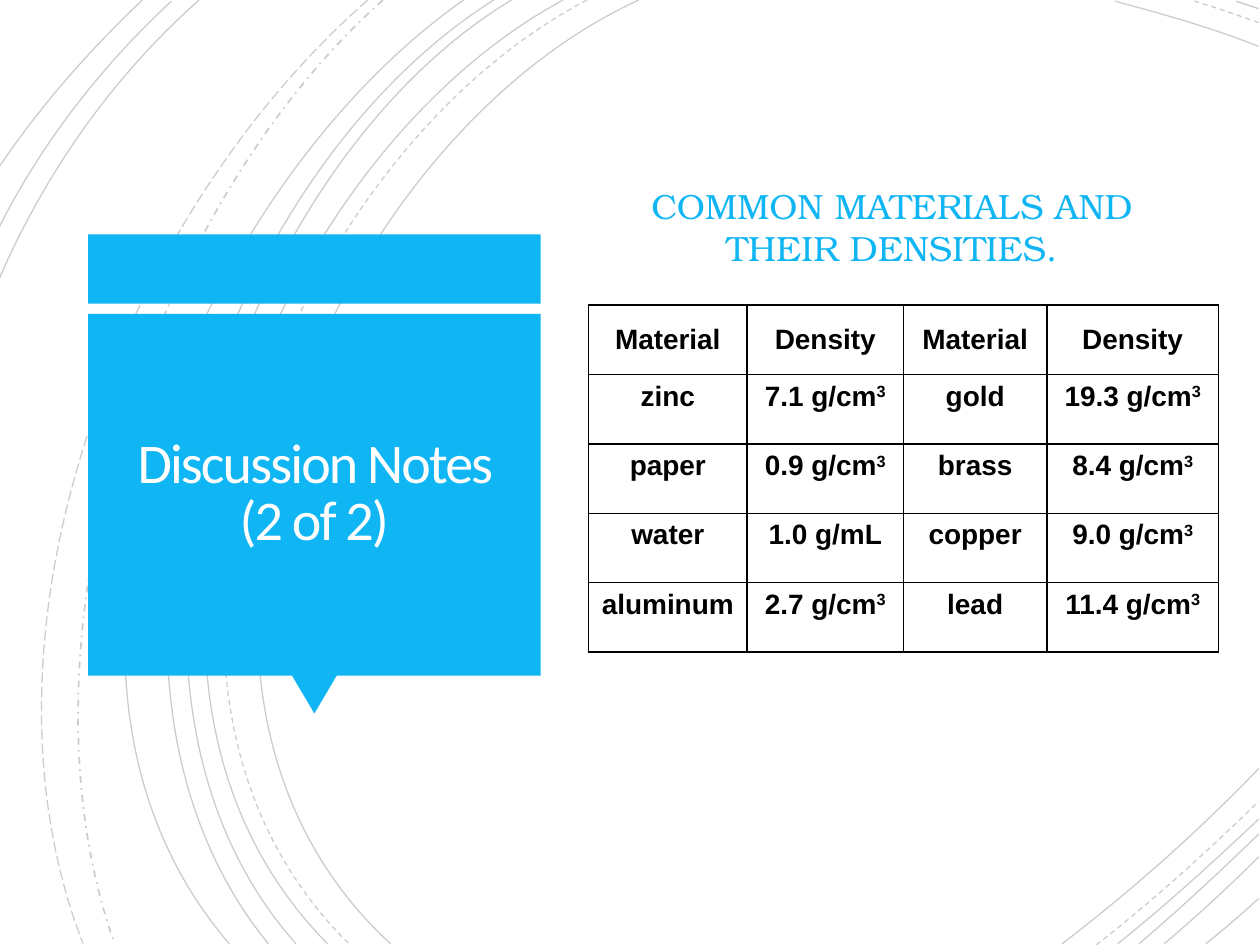
from dataclasses import dataclass

from lxml.etree import SubElement
from pptx import Presentation
from pptx.dml.color import RGBColor
from pptx.enum.dml import MSO_LINE
from pptx.enum.shapes import MSO_SHAPE
from pptx.enum.text import MSO_ANCHOR, MSO_AUTO_SIZE, PP_ALIGN
from pptx.oxml.ns import qn
from pptx.util import Inches, Pt


@dataclass(frozen=True)
class Theme:
    accent: RGBColor = RGBColor(0x10, 0xB6, 0xF4)
    ink: RGBColor = RGBColor(0, 0, 0)
    light: RGBColor = RGBColor(0xFF, 0xFE, 0xFF)
    title_font: str = "Calibri"
    heading_font: str = "TeX Gyre Bonum"
    table_font: str = "Arial"
    title_size: float = 32
    heading_size: float = 20
    table_size: float = 16
    arc_alpha: str = "20000"


THEME = Theme()
WIDTH, HEIGHT = 10, 7.5
GRID_COLUMNS = 10  # square grid, so the slide has 7.5 rows

SOLID, DASH = MSO_LINE.SOLID, MSO_LINE.DASH
DASH_DOT, LONG_DASH = MSO_LINE.DASH_DOT, MSO_LINE.LONG_DASH

# Long arcs run from the top edge to the bottom edge:
# start x, first control, second control, end x, dash, line width
LONG_ARCS = [
    (5.07, (2.56, 1.15), (0.83, 5.4), 3.1, SOLID, 0.75),
    (4.66, (2.26, 1.25), (0.63, 5.38), 2.77, DASH, 0.75),
    (4.47, (2.11, 1.27), (0.5, 5.37), 2.6, SOLID, 0.75),
    (4.06, (1.85, 1.33), (0.5, 5.41), 2.35, SOLID, 0.75),
    (3.92, (1.72, 1.38), (0.38, 5.34), 2.13, SOLID, 0.75),
    (3.68, (1.58, 1.47), (-0.07, 5.29), 1.82, SOLID, 0.75),
    (3.04, (1.17, 1.66), (0.06, 5.09), 0.91, DASH_DOT, 1),
    (2.92, (0.98, 1.69), (-0.31, 4.99), 0.66, LONG_DASH, 0.75),
]
# Corner arcs: start, first control, second control, end, dash
CORNER_ARCS = [
    ((9.99, 0.37), (9.62, 0.22), (9.22, 0.11), (8.85, 0.01), SOLID),
    ((9.99, 0.18), (9.82, 0.12), (9.65, 0.06), (9.48, 0.01), DASH),
    ((9.99, 0.07), (9.93, 0.05), (9.87, 0.03), (9.81, 0.01), SOLID),
    ((8.43, 7.49), (8.98, 7.07), (9.51, 6.6), (9.99, 6.1), SOLID),
    ((8.7, 7.5), (9.15, 7.15), (9.58, 6.76), (9.99, 6.36), DASH),
    ((8.87, 7.49), (9.26, 7.18), (9.63, 6.84), (9.99, 6.5), SOLID),
    ((9.04, 7.49), (9.37, 7.21), (9.68, 6.92), (9.99, 6.62), SOLID),
    ((9.24, 7.49), (9.5, 7.27), (9.75, 7.04), (9.99, 6.8), SOLID),
    ((9.57, 7.49), (9.71, 7.38), (9.85, 7.26), (9.99, 7.13), SOLID),
    ((1.58, 0), (0.88, 0.62), (0.35, 1.39), (-0.01, 2.22), SOLID),
    ((1.36, 0.01), (0.79, 0.54), (0.33, 1.14), (-0.01, 1.81), SOLID),
    ((1.13, 0), (0.71, 0.4), (0.32, 0.84), (-0.01, 1.33), SOLID),
]

# A caret marks the superscript that follows it
DENSITIES = [
    ("Material", "Density", "Material", "Density"),
    ("zinc", "7.1 g/cm^3", "gold", "19.3 g/cm^3"),
    ("paper", "0.9 g/cm^3", "brass", "8.4 g/cm^3"),
    ("water", "1.0 g/mL", "copper", "9.0 g/cm^3"),
    ("aluminum", "2.7 g/cm^3", "lead", "11.4 g/cm^3"),
]
COLUMN_SHARES = (0.252, 0.248, 0.228, 0.272)


def inches(*values):
    return [Inches(v) for v in values]


def share(box, x, y, w, h):
    """Part of a box, given as shares of its width and height."""
    left, top, width, height = box
    return left + x * width, top + y * height, w * width, h * height


def style(p, font, size, color, bold=False):
    p.alignment = PP_ALIGN.CENTER
    p.font.name, p.font.size, p.font.bold = font, Pt(size), bold
    p.font.color.rgb = color


def add_arc(s, points, dash, width):
    """Cubic curve through a start, two controls and an end."""
    start, *rest = [inches(*point) for point in points]
    builder = s.shapes.build_freeform(*start)
    builder.add_line_segments(rest, close=False)
    sp = builder.convert_to_shape()
    sp.shadow.inherit = False
    sp.fill.background()
    sp.line.color.rgb = THEME.ink
    sp.line.width, sp.line.dash_style = Pt(width), dash
    color = sp.line._ln.find(".//" + qn("a:srgbClr"))
    SubElement(color, qn("a:alpha"), val=THEME.arc_alpha)
    outline = sp._element.find(".//" + qn("a:path"))
    curve = SubElement(outline, qn("a:cubicBezTo"))
    for segment in outline.findall(qn("a:lnTo")):
        curve.append(segment[0])
        outline.remove(segment)


def add_backdrop(s, box):
    left, top, width, height = box
    unit = width / GRID_COLUMNS
    bottom = height / unit - 0.01
    arcs = [(((x0, 0), c1, c2, (x1, bottom)), dash, weight)
            for x0, c1, c2, x1, dash, weight in LONG_ARCS]
    arcs += [(points, dash, 0.75) for *points, dash in CORNER_ARCS]
    for points, dash, weight in arcs:
        placed = [(left + x * unit, top + y * unit) for x, y in points]
        add_arc(s, placed, dash, weight)


def add_title_callout(s, box, text):
    parts = [
        (MSO_SHAPE.RECTANGLE, (0, 0, 1, 0.145), 0),
        (MSO_SHAPE.ISOSCELES_TRIANGLE, (0.45, 0.92, 0.1, 0.08), 180),
        (MSO_SHAPE.RECTANGLE, (0, 0.166, 1, 0.755), 0),
    ]
    for kind, part, rotation in parts:
        sp = s.shapes.add_shape(kind, *inches(*share(box, *part)))
        sp.shadow.inherit = False
        sp.rotation = rotation
        sp.fill.solid()
        sp.fill.fore_color.rgb = THEME.accent
        sp.line.fill.background()

    title = s.shapes.title
    s.shapes._spTree.append(title._element)  # in front of the panel
    title.left, title.top, title.width, title.height = inches(
        *share(box, 0.025, 0.19, 0.95, 0.708))
    tf = title.text_frame
    tf.text = text
    tf.word_wrap, tf.auto_size = True, MSO_AUTO_SIZE.NONE
    tf.vertical_anchor = MSO_ANCHOR.MIDDLE
    tf.margin_left = tf.margin_right = Inches(0.1)
    tf.margin_top = tf.margin_bottom = Inches(0.1)
    p = tf.paragraphs[0]
    style(p, THEME.title_font, THEME.title_size, THEME.light)
    p.line_spacing = 0.85
    p.font._rPr.set("spc", "-110")


def add_heading(s, box, text):
    tf = s.shapes.add_textbox(*inches(*box)).text_frame
    tf.word_wrap, tf.vertical_anchor = True, MSO_ANCHOR.MIDDLE
    p = tf.paragraphs[0]
    p.text = text
    p.space_before = Pt(7.5)
    style(p, THEME.heading_font, THEME.heading_size, THEME.accent)


def format_cell(cell, text, anchor):
    cell.vertical_anchor = anchor
    p = cell.text_frame.paragraphs[0]
    style(p, THEME.table_font, THEME.table_size, THEME.ink, bold=True)
    base, _, power = text.partition("^")
    p.add_run().text = base
    if power:
        r = p.add_run()
        r.text = power
        r.font._rPr.set("baseline", "30000")
    tcPr = cell._tc.get_or_add_tcPr()
    for side in ("lnL", "lnR", "lnT", "lnB"):
        ln = SubElement(tcPr, qn(f"a:{side}"), w=str(Pt(1)))
        fill = SubElement(ln, qn("a:solidFill"))
        SubElement(fill, qn("a:srgbClr"), val=str(THEME.ink))
    cell.fill.background()


def add_density_table(s, box, rows):
    table = s.shapes.add_table(len(rows), len(rows[0]), *inches(*box)).table
    table.first_row = table.horz_banding = False
    for column, part in zip(table.columns, COLUMN_SHARES):
        column.width = Inches(box[2] * part)
    for i, row in enumerate(rows):
        anchor = MSO_ANCHOR.TOP if i else MSO_ANCHOR.MIDDLE
        for j, text in enumerate(row):
            format_cell(table.cell(i, j), text, anchor)


def main():
    prs = Presentation()
    prs.slide_width, prs.slide_height = inches(WIDTH, HEIGHT)
    s = prs.slides.add_slide(prs.slide_layouts[5])
    page = (0, 0, WIDTH, HEIGHT)
    add_backdrop(s, page)
    add_title_callout(s, share(page, 0.07, 0.248, 0.359, 0.507),
                      "Discussion Notes (2 of 2)")
    add_heading(s, share(page, 0.5, 0.19, 0.416, 0.1),
                "COMMON MATERIALS AND THEIR DENSITIES.")
    add_density_table(s, share(page, 0.467, 0.323, 0.5, 0.367), DENSITIES)
    prs.save("out.pptx")


if __name__ == "__main__":
    main()
